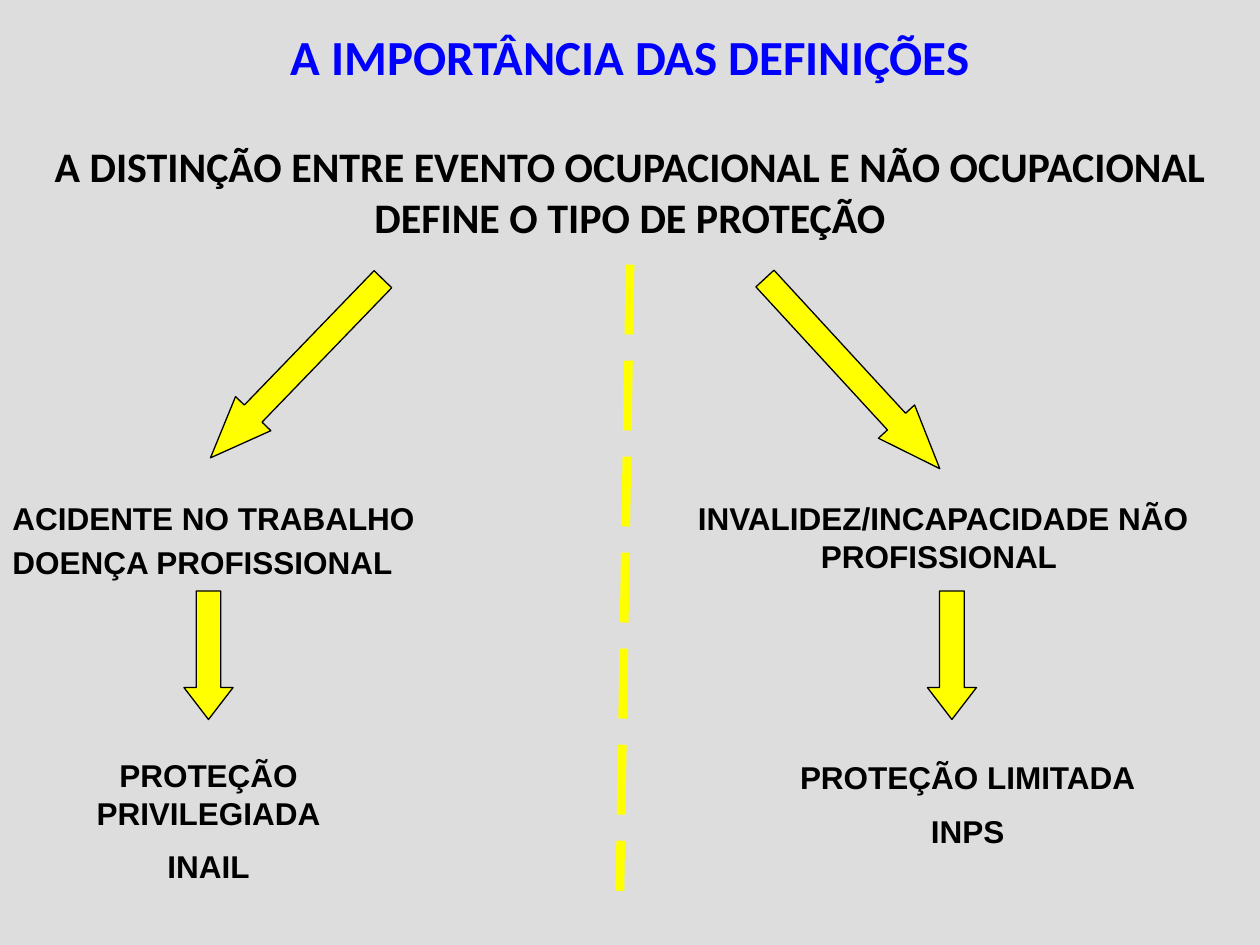
from dataclasses import dataclass

import pptx
import pptx.dml.color
import pptx.enum.dml
import pptx.enum.shapes
import pptx.enum.text
import pptx.oxml.ns
import pptx.util
from lxml import etree

Inches = pptx.util.Inches
Pt = pptx.util.Pt
RGBColor = pptx.dml.color.RGBColor
ALIGN = pptx.enum.text.PP_ALIGN
ANCHOR = pptx.enum.text.MSO_ANCHOR

GREY = RGBColor(0xDD, 0xDD, 0xDD)
BLUE = RGBColor(0x00, 0x00, 0xFF)
BLACK = RGBColor(0x00, 0x00, 0x00)
YELLOW = RGBColor(0xFF, 0xFF, 0x00)

ARROW_WIDTH = 0.39


@dataclass
class Label:
    left: float
    top: float
    width: float
    height: float
    lines: list[str]
    size: int = 18
    font: str = "Arial"
    color: RGBColor = BLACK
    align: ALIGN = ALIGN.CENTER
    space: float = 0.5  # gap before a paragraph, as a share of the text size


@dataclass
class Arrow:
    left: float
    top: float
    height: float
    head: float
    rotation: float = 0


TITLE = Label(0.5, 0.21, 9, 0.46, ["A IMPORTÂNCIA DAS DEFINIÇÕES"],
              28, "Calibri", BLUE, space=0)

LABELS = [
    Label(0, 1.07, 10, 0.94,
          ["A DISTINÇÃO ENTRE EVENTO OCUPACIONAL E NÃO OCUPACIONAL "
           "DEFINE O TIPO DE PROTEÇÃO"], 24, "Calibri", space=0.2),
    Label(0, 3.91, 4.53, 0.77, ["ACIDENTE NO TRABALHO", "DOENÇA PROFISSIONAL"],
          align=ALIGN.LEFT, space=0.2),
    Label(5.24, 3.91, 4.49, 0.71, ["INVALIDEZ/INCAPACIDADE NÃO PROFISSIONAL "]),
    Label(-0.04, 5.95, 3.39, 1.16, ["PROTEÇÃO PRIVILEGIADA", "INAIL"]),
    Label(5.87, 5.97, 3.62, 0.86, ["PROTEÇÃO LIMITADA", "INPS"]),
]

ARROWS = [
    Arrow(2.16, 1.94, 1.97, 1.25, 44),
    Arrow(6.57, 1.94, 2.05, 1.3, 317.4),
    Arrow(1.46, 4.69, 1.02, 0.65),
    Arrow(7.36, 4.69, 1.02, 0.65),
]


def write_text(sp, label: Label, anchor: ANCHOR) -> None:
    tf = sp.text_frame
    tf.word_wrap = True
    tf.auto_size = pptx.enum.text.MSO_AUTO_SIZE.NONE
    tf.vertical_anchor = anchor
    for i, line in enumerate(label.lines):
        p = tf.add_paragraph() if i else tf.paragraphs[0]
        p.alignment = label.align
        p.space_before = Pt(label.size * label.space)
        r = p.add_run()
        r.text = line
        r.font.name = label.font
        r.font.size = Pt(label.size)
        r.font.bold = True
        r.font.color.rgb = label.color


def add_title(s, label: Label) -> None:
    sp = s.shapes.title
    sp.left, sp.top = Inches(label.left), Inches(label.top)
    sp.width, sp.height = Inches(label.width), Inches(label.height)
    write_text(sp, label, ANCHOR.MIDDLE)


def add_label(s, label: Label) -> None:
    sp = s.shapes.add_textbox(Inches(label.left), Inches(label.top),
                              Inches(label.width), Inches(label.height))
    write_text(sp, label, ANCHOR.TOP)


def add_arrow(s, arrow: Arrow) -> None:
    sp = s.shapes.add_shape(pptx.enum.shapes.MSO_SHAPE.DOWN_ARROW,
                            Inches(arrow.left), Inches(arrow.top),
                            Inches(ARROW_WIDTH), Inches(arrow.height))
    sp.adjustments[0] = 0.5
    sp.adjustments[1] = arrow.head
    sp.rotation = arrow.rotation
    sp.shadow.inherit = False
    sp.fill.solid()
    sp.fill.fore_color.rgb = YELLOW
    sp.line.color.rgb = BLACK
    sp.line.width = Pt(0.75)


def add_divider(s) -> None:
    line = s.shapes.add_connector(pptx.enum.shapes.MSO_CONNECTOR.STRAIGHT,
                                  Inches(5), Inches(2.1), Inches(4.92), Inches(7.07))
    line.line.color.rgb = YELLOW
    line.line.width = Pt(5)
    line.line.dash_style = pptx.enum.dml.MSO_LINE.LONG_DASH
    etree.SubElement(line._element.spPr, pptx.oxml.ns.qn("a:effectLst"))


def main() -> None:
    prs = pptx.Presentation()
    prs.slide_width, prs.slide_height = Inches(10), Inches(7.5)
    s = prs.slides.add_slide(prs.slide_layouts.get_by_name("Title Only"))
    s.background.fill.solid()
    s.background.fill.fore_color.rgb = GREY
    add_title(s, TITLE)
    for label in LABELS:
        add_label(s, label)
    for arrow in ARROWS:
        add_arrow(s, arrow)
    add_divider(s)
    prs.save("out.pptx")


if __name__ == "__main__":
    main()
